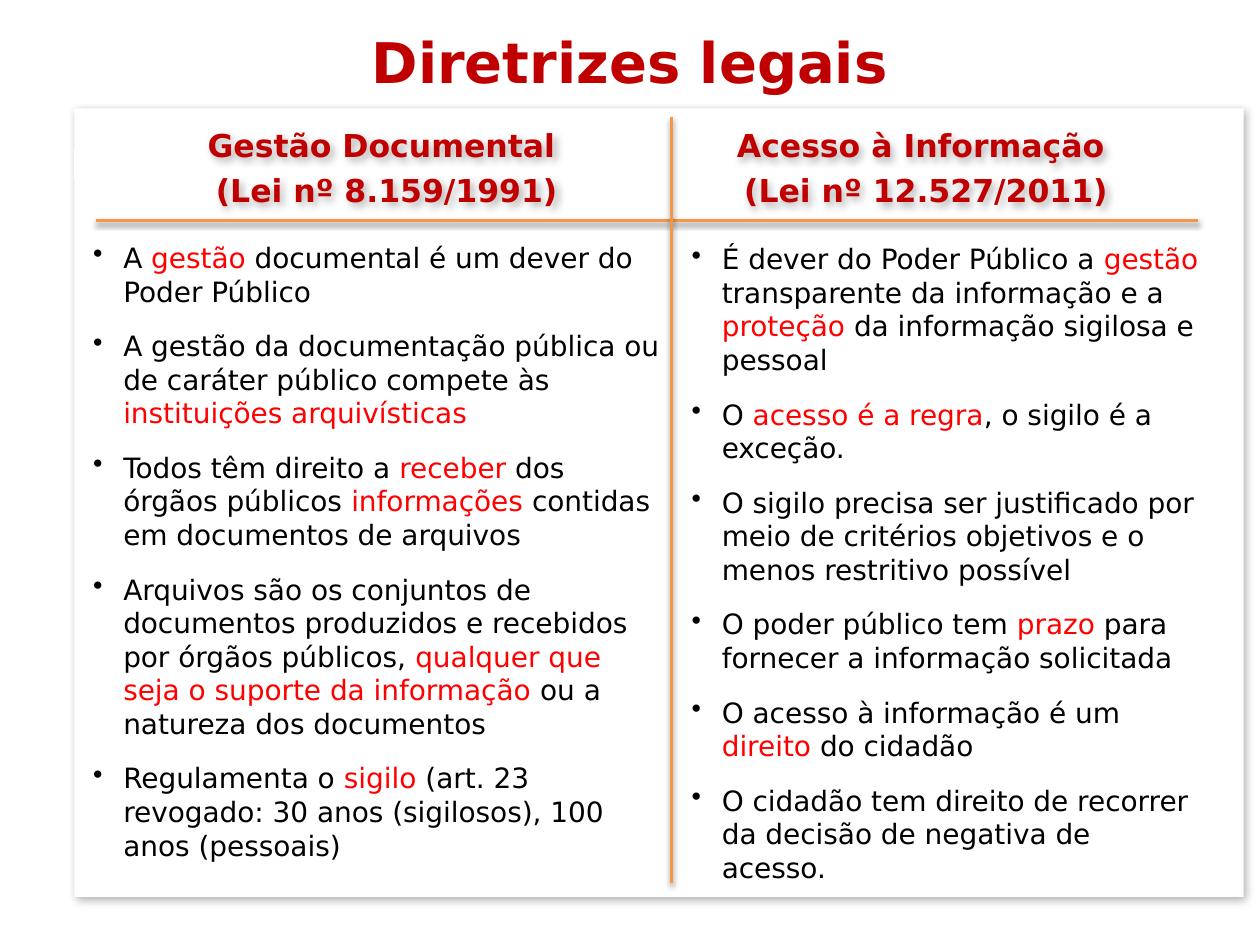
from dataclasses import dataclass

from lxml.etree import SubElement
from pptx import Presentation
from pptx.dml.color import RGBColor
from pptx.enum.shapes import MSO_CONNECTOR, MSO_SHAPE
from pptx.enum.text import MSO_ANCHOR, MSO_AUTO_SIZE, PP_ALIGN
from pptx.oxml.ns import qn
from pptx.util import Inches, Pt


@dataclass(frozen=True)
class Theme:
    font: str = "DejaVu Sans"
    heading: RGBColor = RGBColor(0xC0, 0x00, 0x00)
    accent: RGBColor = RGBColor(0xFF, 0x00, 0x00)
    body: RGBColor = RGBColor(0x00, 0x00, 0x00)
    panel: RGBColor = RGBColor(0xFF, 0xFF, 0xFF)
    rule: RGBColor = RGBColor(0xF7, 0x96, 0x46)
    title_size: Pt = Pt(32)
    header_size: Pt = Pt(18)
    body_size: Pt = Pt(16)


theme = Theme()


def add_shadow(shape, opacity, blur, distance, angle):
    """Give a shape a soft black shadow; blur and distance are in points."""
    properties = shape._element.spPr
    for old in properties.findall(qn("a:effectLst")):
        properties.remove(old)
    effects = SubElement(properties, qn("a:effectLst"))
    shadow = SubElement(effects, qn("a:outerShdw"), blurRad=str(Pt(blur)),
                        dist=str(Pt(distance)), dir=str(angle * 60000),
                        algn="ctr", rotWithShape="0")
    color = SubElement(shadow, qn("a:srgbClr"), val="000000")
    SubElement(color, qn("a:alpha"), val=str(opacity * 1000))


def style_font(font, size, color, bold=False):
    font.name = theme.font
    font.size = size
    font.bold = bold
    font.color.rgb = color


deck = Presentation()
deck.slide_width, deck.slide_height = Inches(10), Inches(7.5)
page = deck.slides.add_slide(deck.slide_layouts[5])

# White panel, and the strip that softens its left edge
panel = page.shapes.add_shape(MSO_SHAPE.RECTANGLE, Inches(0.59), Inches(0.86),
                              Inches(9.28), Inches(6.26))
panel.line.fill.background()
add_shadow(panel, 30, 4.5, 2.6, 53)
strip = page.shapes.add_shape(MSO_SHAPE.RECTANGLE, Inches(0.59), Inches(1.19),
                              Inches(9), Inches(0.23))
strip.shadow.inherit = False
strip.line.color.rgb = theme.panel
strip.line.width = Pt(0.75)
for shape in (panel, strip):
    shape.fill.solid()
    shape.fill.fore_color.rgb = theme.panel

# Title
title = page.shapes.title
title.left, title.top = Inches(0), Inches(0.17)
title.width, title.height = Inches(10), Inches(0.64)
title.text_frame.text = "Diretrizes legais"
title.text_frame.auto_size = MSO_AUTO_SIZE.NONE
title.text_frame.vertical_anchor = MSO_ANCHOR.TOP
title.text_frame.paragraphs[0].alignment = PP_ALIGN.CENTER
style_font(title.text_frame.paragraphs[0].font, theme.title_size, theme.heading, True)

# Columns: header box, body box (left, top, width, height) and their wording.
# In each bullet, every second piece between bars is highlighted.
columns = [
    ((0.88, 0.95, 4.38, 0.91), ["Gestão Documental ", "(Lei nº 8.159/1991)"],
     (0.64, 1.86, 4.74, 5.37), [
         "A |gestão| documental é um dever do Poder Público",
         "A gestão da documentação pública ou de caráter público compete às "
         "|instituições arquivísticas",
         "Todos têm direito a |receber |dos órgãos públicos |informações |"
         "contidas em documentos de arquivos",
         "Arquivos são os conjuntos de documentos produzidos e recebidos por "
         "órgãos públicos, |qualquer que seja o suporte da informação |"
         "ou a natureza dos documentos",
         "Regulamenta o |sigilo| (art. 23 revogado: 30 anos (sigilosos), "
         "100 anos (pessoais)",
     ]),
    ((5.26, 0.95, 4.18, 0.91), ["Acesso à Informação ", "(Lei nº 12.527/2011)"],
     (5.39, 1.87, 4.22, 5.36), [
         "É dever do Poder Público a |gestão |transparente da informação e a "
         "|proteção| da informação sigilosa e pessoal",
         "O |acesso é a regra|, o sigilo é a exceção.",
         "O sigilo precisa ser justificado por meio de critérios objetivos e o "
         "menos restritivo possível",
         "O poder público tem |prazo| para fornecer a informação solicitada",
         "O acesso à informação é um |direito |do cidadão",
         "O cidadão tem direito de recorrer da decisão de negativa de acesso.",
     ]),
]

for header_place, header_lines, body_place, bullets in columns:
    header = page.shapes.add_textbox(*map(Inches, header_place))
    header.text_frame.word_wrap = True
    header.text_frame.text = "\n".join(header_lines)
    add_shadow(header, 30, 4.5, 2.6, 53)
    for para in header.text_frame.paragraphs:
        para.alignment = PP_ALIGN.CENTER
        para.space_before = Pt(4)
        style_font(para.font, theme.header_size, theme.heading, True)

    body = page.shapes.add_textbox(*map(Inches, body_place))
    body.text_frame.word_wrap = True
    body.text_frame.text = "\n".join([""] * len(bullets))
    for para, bullet in zip(body.text_frame.paragraphs, bullets):
        para.space_after = Pt(12)
        style_font(para.font, theme.body_size, theme.body)
        settings = para._p.get_or_add_pPr()
        settings.set("marL", str(Inches(0.24)))
        settings.set("indent", str(-Inches(0.24)))
        mark = settings.makeelement(qn("a:buChar"), {"char": "•"})
        settings.find(qn("a:defRPr")).addprevious(mark)
        for index, piece in enumerate(bullet.split("|")):
            span = para.add_run()
            span.text = piece
            if index % 2:
                span.font.color.rgb = theme.accent

# Rules under the headers and between the columns
for ends in ((0.76, 1.75, 9.51, 1.75), (5.33, 0.93, 5.33, 7.01)):
    rule = page.shapes.add_connector(MSO_CONNECTOR.STRAIGHT, *map(Inches, ends))
    rule.line.color.rgb = theme.rule
    rule.line.width = Pt(2)
    add_shadow(rule, 38, 3.1, 1.6, 90)

deck.save("out.pptx")
